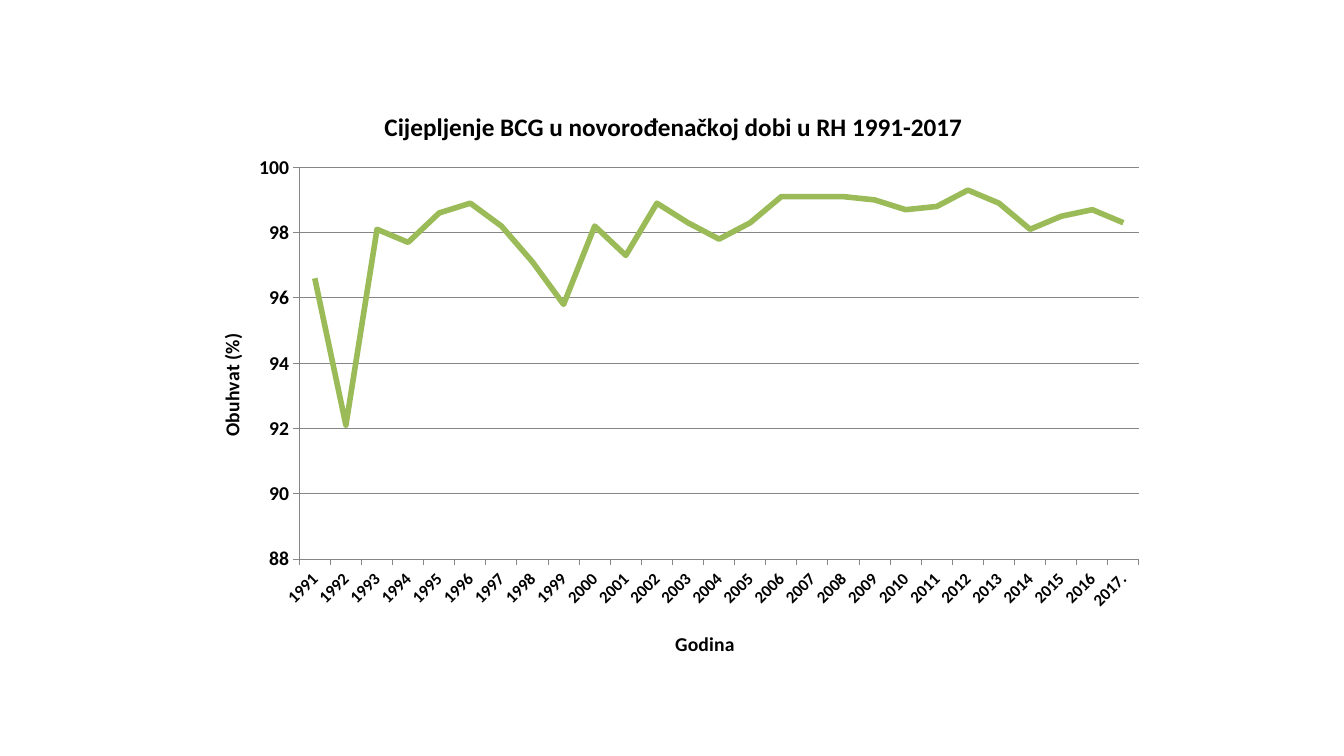
from dataclasses import dataclass

from lxml import etree
from pptx import Presentation
from pptx import util as u
from pptx.chart.data import CategoryChartData
from pptx.dml.color import RGBColor
from pptx.enum import chart as ch
from pptx.oxml.ns import qn


@dataclass(frozen=True)
class Theme:
    """Colours, font and type sizes of the slide."""
    font: str = "Calibri"
    ink: str = "000000"
    rule: str = "868686"
    coverage: str = "9BBB59"
    title: int = 18
    label: int = 14
    year: int = 12


THEME = Theme()
YEARS = [str(year) for year in range(1991, 2017)] + ["2017."]
COVERAGE = [96.6, 92.1, 98.1, 97.7, 98.6, 98.9, 98.2, 97.1, 95.8,
            98.2, 97.3, 98.9, 98.3, 97.8, 98.3, 99.1, 99.1, 99.1,
            99.0, 98.7, 98.8, 99.3, 98.9, 98.1, 98.5, 98.7, 98.3]


def style_font(font, size):
    """Apply the theme's bold type at the given size."""
    font.name = THEME.font
    font.size = u.Pt(size)
    font.bold = True
    font.color.rgb = RGBColor.from_string(THEME.ink)


def style_line(line, color, width):
    """Set a line's colour and width."""
    line.color.rgb = RGBColor.from_string(color)
    line.width = u.Pt(width)


def place(element, index, **fractions):
    """Position a chart part by fractions of the chart area."""
    layout = element.find(qn("c:layout"))
    if layout is None:
        layout = etree.Element(qn("c:layout"))
        element.insert(index, layout)
    manual = etree.SubElement(layout, qn("c:manualLayout"))
    if "w" in fractions:
        etree.SubElement(manual, qn("c:layoutTarget")).set("val", "inner")
    for mode in ("xMode", "yMode"):
        etree.SubElement(manual, qn("c:" + mode)).set("val", "edge")
    for name, value in fractions.items():
        etree.SubElement(manual, qn("c:" + name)).set("val", str(value))


def add_title(owner, words, size, x, y, rotation=0):
    """Write and place the title of a chart or an axis."""
    owner.has_title = True
    title = getattr(owner, "chart_title", None) or owner.axis_title
    tf = title.text_frame
    r = tf.paragraphs[0].add_run()
    r.text = words
    style_font(r.font, size)
    body = tf._txBody.find(qn("a:bodyPr"))
    body.set("rot", str(rotation * 60000))
    body.set("vert", "horz")
    place(title._element, 1, x=x, y=y)


def style_axis(axis, size):
    """Format an axis line, its ticks and its labels."""
    axis.major_tick_mark = ch.XL_TICK_MARK.OUTSIDE
    axis.minor_tick_mark = ch.XL_TICK_MARK.NONE
    style_line(axis.format.line, THEME.rule, 0.75)
    style_font(axis.tick_labels.font, size)


def add_coverage_chart(s, left, top, width, height):
    """Draw the vaccination coverage line chart in the given box."""
    data = CategoryChartData()
    data.categories = YEARS
    data.add_series("Series 1", COVERAGE)
    chart = s.shapes.add_chart(ch.XL_CHART_TYPE.LINE, left, top,
                               width, height, data).chart
    chart.has_legend = False
    chart.font.name = THEME.font
    chart.font.size = u.Pt(10)
    add_title(chart, "Cijepljenje BCG u novorođenačkoj dobi u RH 1991-2017",
              THEME.title, 0.2, 0.04)

    years, percent = chart.category_axis, chart.value_axis
    style_axis(years, THEME.year)
    years.has_major_gridlines = False
    years.tick_labels._element.txPr.find(qn("a:bodyPr")).set("rot", "-2700000")
    add_title(years, "Godina", THEME.label, 0.5, 0.92)

    style_axis(percent, THEME.label)
    percent.minimum_scale, percent.maximum_scale = 88, 100
    percent.major_unit = 2
    percent.has_major_gridlines = True
    style_line(percent.major_gridlines.format.line, THEME.rule, 0.75)
    percent.tick_labels.number_format = "General"
    percent.tick_labels.number_format_is_linked = False
    add_title(percent, "Obuhvat (%)", THEME.label, 0.03, 0.42, -90)

    plot = chart.plots[0]
    plot.vary_by_categories = False
    series = plot.series[0]
    series.smooth = False
    series.marker.style = ch.XL_MARKER_STYLE.NONE
    style_line(series.format.line, THEME.coverage, 4)
    plot_area = chart._chartSpace.find(".//" + qn("c:plotArea"))
    place(plot_area, 0, x=0.117, y=0.146, w=0.864, h=0.66)


def main():
    """Build and save the presentation."""
    prs = Presentation()
    prs.slide_width, prs.slide_height = u.Inches(13.33), u.Inches(7.5)
    s = prs.slides.add_slide(prs.slide_layouts[6])
    add_coverage_chart(s, u.Inches(1.84), u.Inches(0.8),
                       u.Inches(9.64), u.Inches(5.89))
    prs.save("out.pptx")


if __name__ == "__main__":
    main()
